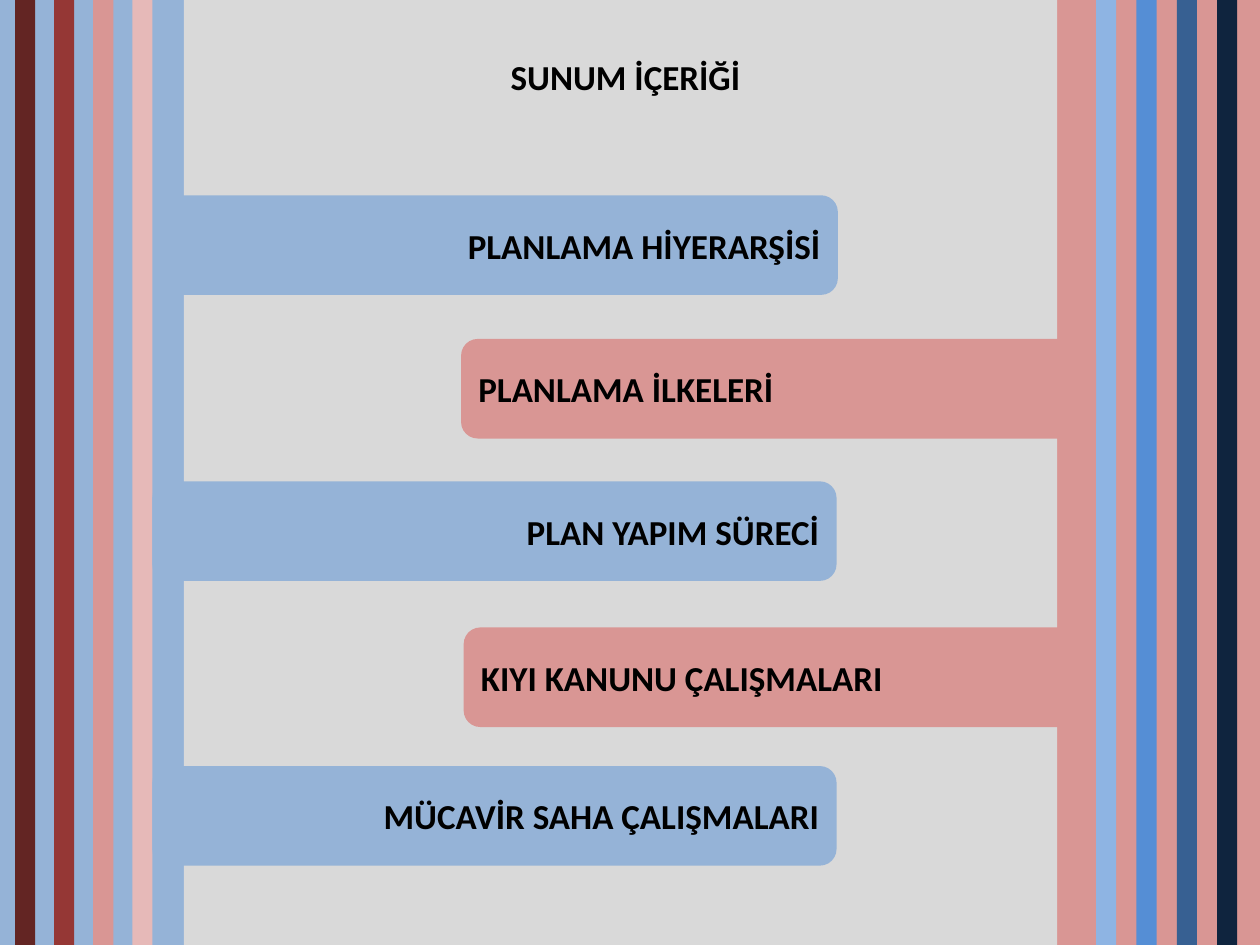
"""Build the agenda slide with interlocking bars and striped side panels."""
from dataclasses import dataclass

from pptx import Presentation
from pptx import util as u
from pptx.dml.color import RGBColor
from pptx.enum import shapes, text


@dataclass(frozen=True)
class Theme:
    font: str = "Calibri"
    size: int = 20
    ink: str = "000000"
    blue: str = "95B3D7"
    rose: str = "D99694"
    grey: str = "D9D9D9"
    left_stripes: tuple = ("632523", "953735", "D99694", "E6B9B8")
    right_stripes: tuple = ("8EB4E3", "558ED5", "376092", "0F243E")


class AgendaSlide:
    def __init__(self, slide, theme):
        self.slide = slide
        self.theme = theme

    def block(self, kind, left, top, width, height, color):
        shape = self.slide.shapes.add_shape(
            kind, u.Inches(left), u.Inches(top), u.Inches(width), u.Inches(height))
        shape.shadow.inherit = False
        shape.fill.solid()
        shape.fill.fore_color.rgb = RGBColor.from_string(color)
        shape.line.fill.background()
        return shape

    def panel(self, left, width, color):
        return self.block(shapes.MSO_SHAPE.RECTANGLE, left, 0, width, 7.5, color)

    def stripes(self, left, pitch, colors):
        for index, color in enumerate(colors):
            self.panel(left + index * pitch, 0.16, color)

    def label(self, shape, words, alignment):
        frame = shape.text_frame
        frame.text = words
        frame.word_wrap = True
        frame.auto_size = text.MSO_AUTO_SIZE.NONE
        frame.vertical_anchor = text.MSO_ANCHOR.MIDDLE
        paragraph = frame.paragraphs[0]
        paragraph.alignment = alignment
        paragraph.font.name = self.theme.font
        paragraph.font.size = u.Pt(self.theme.size)
        paragraph.font.bold = True
        paragraph.font.color.rgb = RGBColor.from_string(self.theme.ink)

    def bar(self, left, top, width, color, words, alignment):
        shape = self.block(
            shapes.MSO_SHAPE.ROUNDED_RECTANGLE, left, top, width, 0.79, color)
        self.label(shape, words, alignment)

    def title(self, words):
        title = self.slide.shapes.title
        title.left, title.top = u.Inches(2.25), u.Inches(0.21)
        title.width, title.height = u.Inches(5.43), u.Inches(0.79)
        self.label(title, words, text.PP_ALIGN.CENTER)
        title.element.getparent().append(title.element)


def main():
    presentation = Presentation()
    presentation.slide_width = u.Inches(10)
    presentation.slide_height = u.Inches(7.5)
    theme = Theme()
    agenda = AgendaSlide(
        presentation.slides.add_slide(presentation.slide_layouts[5]), theme)

    agenda.panel(8.39, 1.61, theme.rose)
    agenda.panel(0, 1.46, theme.blue)
    agenda.panel(1.46, 6.93, theme.grey)
    agenda.stripes(8.7, 0.32, theme.right_stripes)
    agenda.stripes(0.12, 0.31, theme.left_stripes)

    from_left = (theme.blue, text.PP_ALIGN.RIGHT)
    from_right = (theme.rose, text.PP_ALIGN.LEFT)
    topics = [
        ("PLANLAMA HİYERARŞİSİ", 1.22, 1.55, 5.43, from_left),
        ("PLANLAMA İLKELERİ", 3.66, 2.69, 5.04, from_right),
        ("PLAN YAPIM SÜRECİ", 1.21, 3.82, 5.43, from_left),
        ("KIYI KANUNU ÇALIŞMALARI", 3.68, 4.98, 4.95, from_right),
        ("MÜCAVİR SAHA ÇALIŞMALARI", 1.21, 6.08, 5.43, from_left),
    ]
    for words, left, top, width, (color, alignment) in topics:
        agenda.bar(left, top, width, color, words, alignment)

    agenda.title("SUNUM İÇERİĞİ")
    presentation.save("out.pptx")


if __name__ == "__main__":
    main()
